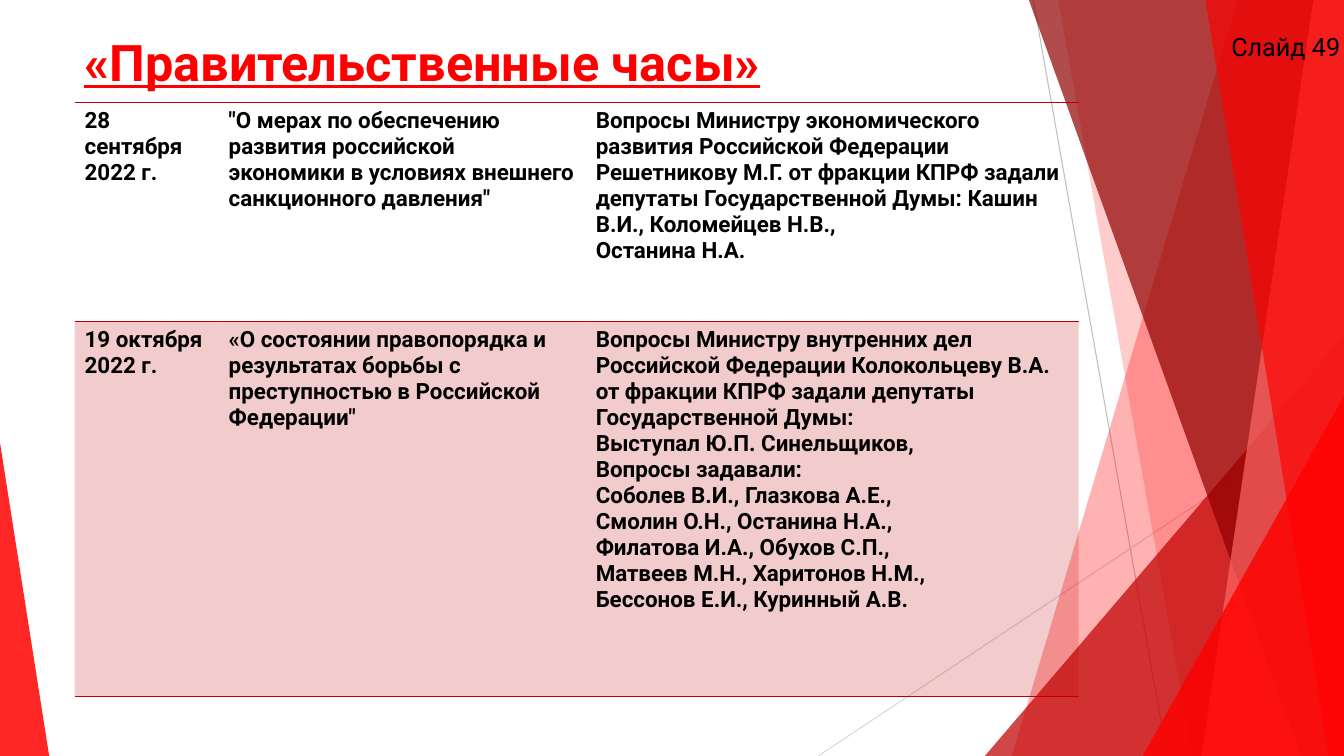
from dataclasses import dataclass

import lxml.etree
import pptx
import pptx.dml.color
import pptx.enum.shapes
import pptx.oxml.ns
import pptx.util

Cm = pptx.util.Cm
Pt = pptx.util.Pt
qn = pptx.oxml.ns.qn

WIDTH, HEIGHT = 33.87, 19.05
RED, DARK_RED, BLACK = "FF0000", "C00000", "000000"
FONT = "Roboto"


@dataclass
class Ray:
    start: tuple[float, float]
    end: tuple[float, float]
    color: str


@dataclass
class Strip:
    """A band from a slanted left side to the right edge of the page."""
    top_left: float
    bottom_left: float
    color: str
    opacity: int
    top_right: float = WIDTH


@dataclass
class Wedge:
    """A right triangle standing on the bottom edge of the page."""
    left: float
    top: float
    width: float
    apex: float
    color: str
    opacity: int


RAYS = [
    Ray((26.04, 0), (29.41, HEIGHT), "BFBFBF"),
    Ray((WIDTH, 10.24), (20.62, HEIGHT), "D9D9D9"),
]
FACETS = [
    Strip(31.19, 25.5, RED, 30),
    Strip(26.67, 30.05, RED, 20),
    Wedge(24.82, 8.46, 9.05, 1, DARK_RED, 72),
    Strip(25.93, 32.79, "900000", 70),
    Strip(33.1, 30.28, "FF6666", 70),
    Strip(30.38, 33.48, RED, 65),
    Wedge(28.8, 9.98, 5.07, 1, RED, 80),
    Wedge(0, 11.15, 1.24, 0, RED, 85),
]

COLUMN_WIDTHS = [3.63, 9.25, 12.42]
ROW_HEIGHTS = [5.51, 9.45]
HOURS = [
    [
        ["28 сентября 2022 г."],
        ["\"О мерах по обеспечению развития российской экономики в условиях "
         "внешнего санкционного давления\""],
        ["Вопросы Министру экономического развития Российской Федерации "
         "Решетникову М.Г. от фракции КПРФ задали депутаты Государственной "
         "Думы: Кашин В.И., Коломейцев Н.В.,",
         "Останина Н.А."],
    ],
    [
        ["19 октября 2022 г."],
        ["«О состоянии правопорядка и результатах борьбы с преступностью в "
         "Российской Федерации\""],
        ["Вопросы Министру внутренних дел\vРоссийской Федерации Колокольцеву "
         "В.А. от фракции КПРФ задали депутаты Государственной Думы:",
         "Выступал Ю.П. Синельщиков,",
         "Вопросы задавали:",
         "Соболев В.И., Глазкова А.Е.,",
         "Смолин О.Н., Останина Н.А.,",
         "Филатова И.А., Обухов С.П.,",
         "Матвеев М.Н., Харитонов Н.М.,",
         "Бессонов Е.И., Куринный А.В."],
    ],
]


def rgb(color: str) -> pptx.dml.color.RGBColor:
    return pptx.dml.color.RGBColor.from_string(color)


def paint(fill, color: str, opacity: int) -> None:
    fill.solid()
    fill.fore_color.rgb = rgb(color)
    tint = fill._xPr.find(qn("a:solidFill"))[0]
    lxml.etree.SubElement(tint, qn("a:alpha"), val=str(opacity * 1000))


def write(frame, lines: list[str], *, size: float, color: str = BLACK,
          bold: bool = False, underline: bool = False) -> None:
    for number, line in enumerate(lines):
        para = frame.add_paragraph() if number else frame.paragraphs[0]
        para.text = line
        for span in para.runs:
            span.font.name = FONT
            span.font.size = Pt(size)
            span.font.color.rgb = rgb(color)
            span.font.bold = bold
            span.font.underline = underline


def add_text(page, text: str, left: float, top: float, width: float,
             height: float, *, wrap: bool = True, **style) -> None:
    box = page.shapes.add_textbox(Cm(left), Cm(top), Cm(width), Cm(height))
    box.text_frame.word_wrap = wrap
    write(box.text_frame, [text], **style)


def add_ray(page, ray: Ray) -> None:
    line = page.shapes.add_connector(
        pptx.enum.shapes.MSO_CONNECTOR.STRAIGHT,
        *(Cm(value) for value in ray.start + ray.end))
    line.line.color.rgb = rgb(ray.color)
    line.line.width = Pt(0.75)
    lxml.etree.SubElement(line._element.spPr, qn("a:effectLst"))


def add_facet(page, facet: Strip | Wedge) -> None:
    if isinstance(facet, Strip):
        corners = [(facet.top_right, 0), (WIDTH, HEIGHT),
                   (facet.bottom_left, HEIGHT)]
        builder = page.shapes.build_freeform(Cm(facet.top_left), 0)
        builder.add_line_segments([(Cm(x), Cm(y)) for x, y in corners])
        shape = builder.convert_to_shape()
    else:
        shape = page.shapes.add_shape(
            pptx.enum.shapes.MSO_SHAPE.ISOSCELES_TRIANGLE,
            Cm(facet.left), Cm(facet.top),
            Cm(facet.width), Cm(HEIGHT - facet.top))
        shape.adjustments[0] = facet.apex
    shape.shadow.inherit = False
    shape.line.fill.background()
    paint(shape.fill, facet.color, facet.opacity)


def set_borders(cell) -> None:
    """Rule the cell above and below, and leave its sides open."""
    properties = cell._tc.get_or_add_tcPr()
    for side in ("lnL", "lnR", "lnT", "lnB"):
        edge = lxml.etree.SubElement(properties, qn(f"a:{side}"), w=str(Pt(1)))
        if side in ("lnT", "lnB"):
            fill = lxml.etree.SubElement(edge, qn("a:solidFill"))
            lxml.etree.SubElement(fill, qn("a:srgbClr"), val=DARK_RED)
        else:
            lxml.etree.SubElement(edge, qn("a:noFill"))


def add_hours_table(page) -> None:
    table = page.shapes.add_table(
        len(ROW_HEIGHTS), len(COLUMN_WIDTHS), Cm(1.88), Cm(2.59),
        Cm(sum(COLUMN_WIDTHS)), Cm(sum(ROW_HEIGHTS))).table
    table.first_row = table.horz_banding = False
    for column, width in zip(table.columns, COLUMN_WIDTHS):
        column.width = Cm(width)
    for number, (row, height) in enumerate(zip(table.rows, ROW_HEIGHTS)):
        row.height = Cm(height)
        for cell, lines in zip(row.cells, HOURS[number]):
            set_borders(cell)
            if number % 2:
                paint(cell.fill, DARK_RED, 20)
            else:
                cell.fill.background()
            write(cell.text_frame, lines, size=16, bold=True)


def main() -> None:
    deck = pptx.Presentation()
    deck.slide_width, deck.slide_height = Cm(WIDTH), Cm(HEIGHT)
    page = deck.slides.add_slide(deck.slide_layouts[6])

    # Background rays and facets
    for ray in RAYS:
        add_ray(page, ray)
    for facet in FACETS:
        add_facet(page, facet)

    # Title, table and slide label
    add_text(page, "«Правительственные часы»", 1.88, 0.66, 23.88, 1.8,
             size=36, color=RED, bold=True, underline=True)
    add_hours_table(page)
    add_text(page, "Слайд 49", 30.78, 0.66, 3.38, 1.02, wrap=False, size=18)

    deck.save("out.pptx")


if __name__ == "__main__":
    main()
